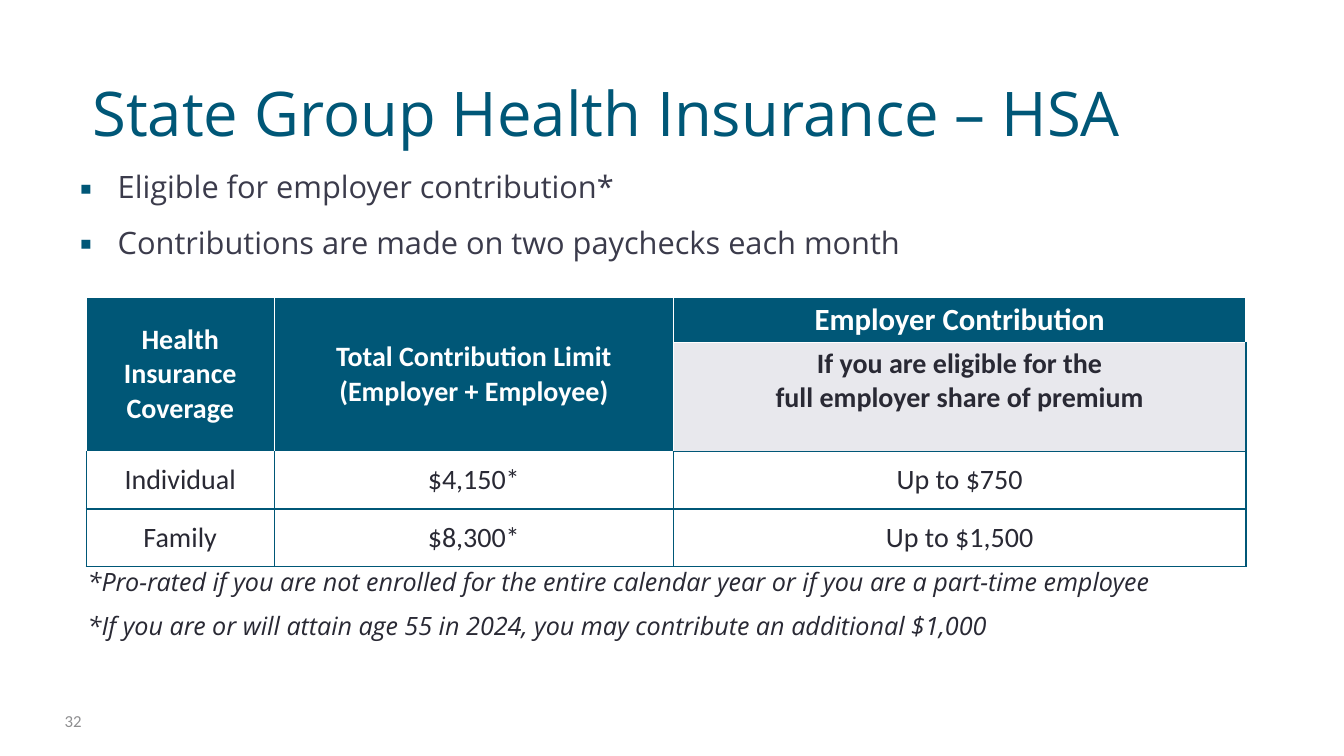
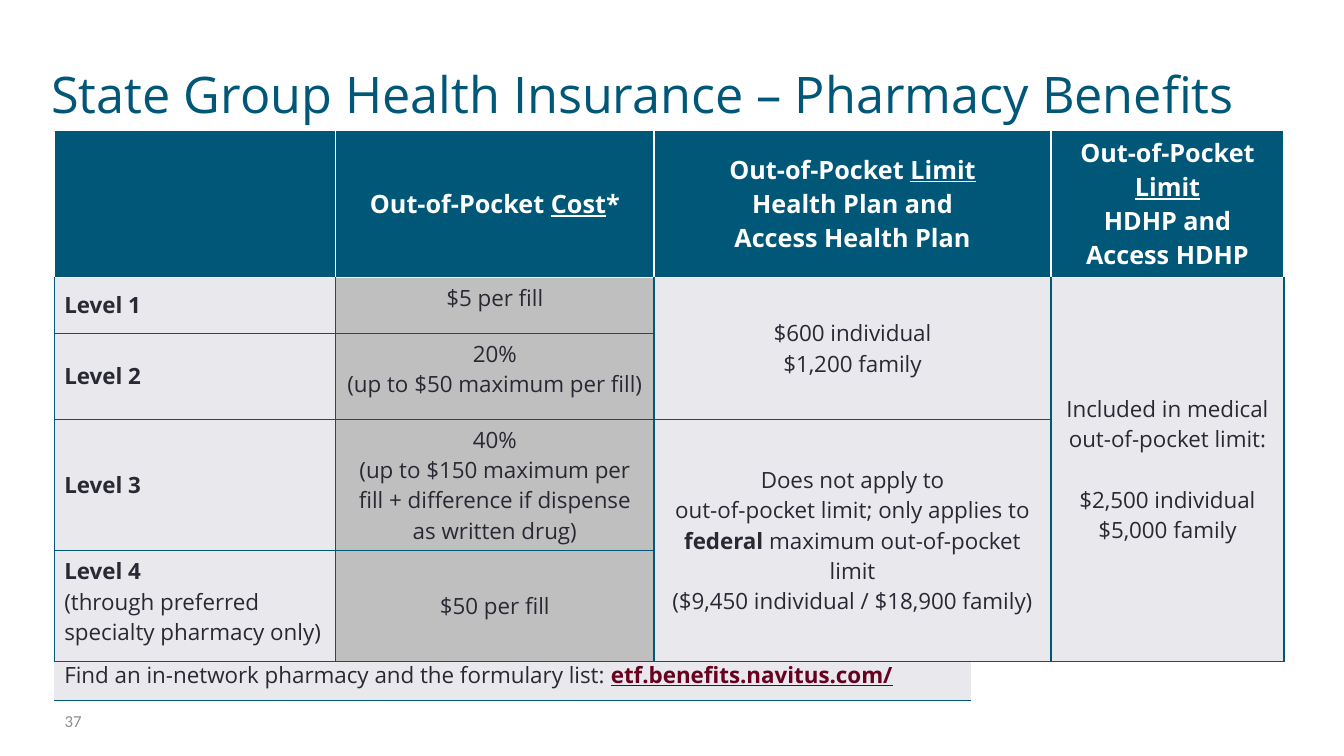
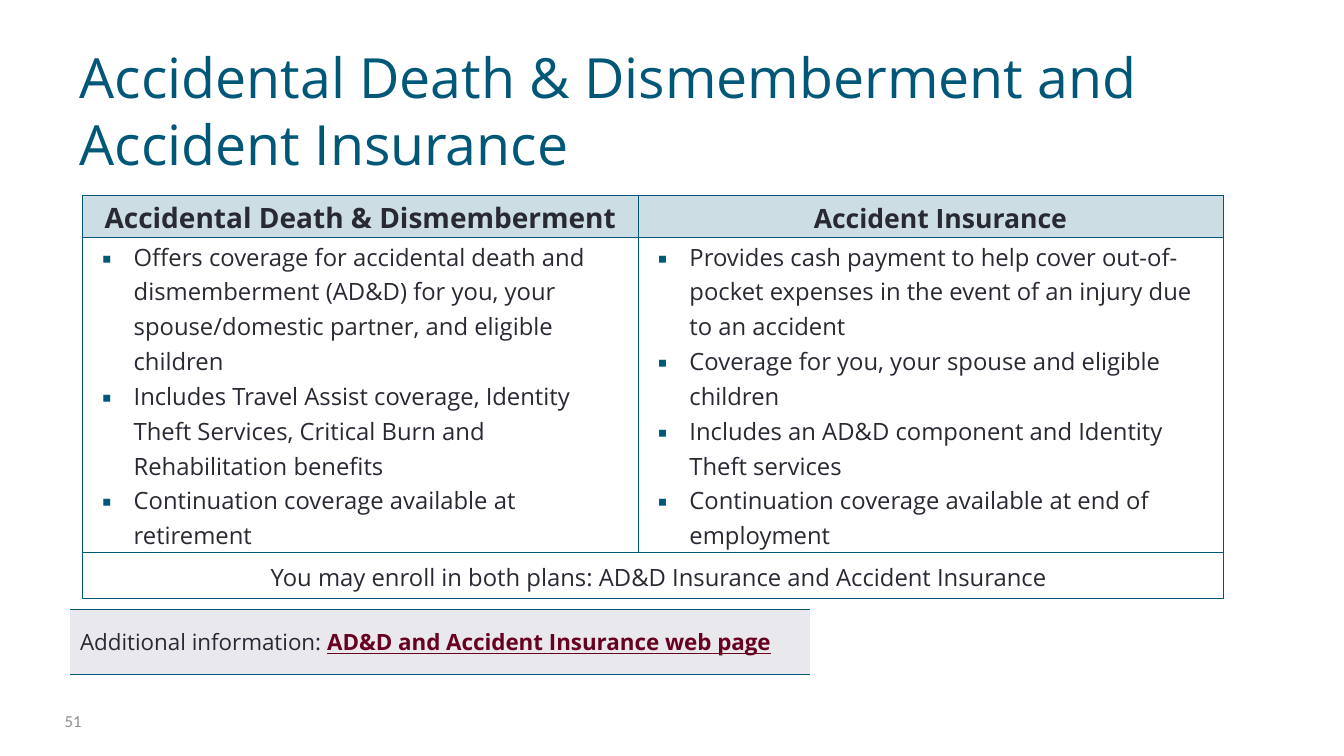
from dataclasses import dataclass, replace

from lxml.etree import SubElement
from pptx import Presentation
from pptx.dml.color import RGBColor as Rgb
from pptx.enum.text import MSO_ANCHOR as Anchor, PP_ALIGN as Align
from pptx.oxml.ns import qn
from pptx.util import Pt


# Theme
class Theme:
    teal, white, ink, slate = "005777", "FFFFFF", "292934", "3B3B4B"
    pale, gray, ice = "E8E8ED", "BFBFBF", "CCDDE4"
    link, number = "68001F", "8E8E90"
    sans, table_sans = "Open Sans", "Calibri"
    big, body, strong, note, text, small = 22, 17, 20, 18, 16, 12


@dataclass(frozen=True)
class Look:
    size: float
    color: str = Theme.ink
    face: str = Theme.sans
    fill: str = None
    bold: bool = False
    italic: bool = False
    align: Align = Align.LEFT
    anchor: Anchor = Anchor.MIDDLE
    left: float = 0        # left margin of the text
    hang: float = 0        # hanging bullet width, 0 for no bullet
    lines: float = 1.0
    after: float = 0


@dataclass(frozen=True)
class Cell:
    look: Look
    paras: tuple = ()
    rows: int = 1
    cols: int = 1


def cell(look, *paras, rows=1, cols=1):
    return Cell(look, paras, rows, cols)


TITLE = Look(44, Theme.teal, anchor=Anchor.BOTTOM)
NUMBER = Look(Theme.small, Theme.number, Theme.table_sans)
POINTS = Look(Theme.big, Theme.slate, anchor=Anchor.TOP, left=27, hang=27, after=13)
NOTES = Look(Theme.note, italic=True, anchor=Anchor.TOP, after=9.5)
BAND = Look(Theme.text, fill=Theme.pale)

# Looks of the HSA table
HSA = Look(Theme.strong, face=Theme.table_sans, align=Align.CENTER)
HSA_HEAD = replace(HSA, color=Theme.white, fill=Theme.teal, bold=True)
HSA_TOP = replace(HSA_HEAD, size=Theme.big, anchor=Anchor.TOP)
HSA_SUB = replace(HSA, fill=Theme.pale, bold=True, anchor=Anchor.TOP)

# Looks of the pharmacy table
RX_HEAD = Look(Theme.note, Theme.white, fill=Theme.teal, bold=True, align=Align.CENTER)
LEVEL = Look(Theme.text, fill=Theme.pale)
LIMIT = replace(LEVEL, align=Align.CENTER)
COST = replace(LIMIT, fill=Theme.gray)
COST_TOP = replace(COST, anchor=Anchor.TOP)

# Looks of the accident table
PLAN = Look(Theme.strong, fill=Theme.ice, bold=True, align=Align.CENTER, lines=1.07)
PLAN_RIGHT = replace(PLAN, size=19, left=13.5)
FEATURES = Look(Theme.body, anchor=Anchor.TOP, left=31.5, hang=22.5, lines=1.07)
BOTH = Look(Theme.body, align=Align.CENTER, left=8.5, lines=1.07)

# Content: a paragraph is a string, or a list of strings and (style, text) runs
SLIDES = [
    dict(
        number="32",
        title=("State Group Health Insurance – HSA", 44, (59, 20, 860, 90)),
        texts=[
            (POINTS, (50, 116.5, 860, 90), (
                "Eligible for employer contribution*",
                "Contributions are made on two paychecks each month")),
            (NOTES, (55.5, 401, 818, 63.5), (
                "*Pro-rated if you are not enrolled for the entire calendar year"
                " or if you are a part-time employee",
                "*If you are or will attain age 55 in 2024, you may contribute"
                " an additional $1,000")),
        ],
        table=dict(
            at=(61.5, 212.25), insets=(5, 3, 5, 3),
            cols=(134.5, 285, 409), rows=(32, 77, 41, 41),
            cells=[
                [cell(HSA_HEAD, "Health Insurance Coverage", rows=2),
                 cell(HSA_HEAD, "Total Contribution Limit", "(Employer + Employee)", rows=2),
                 cell(HSA_TOP, "Employer Contribution")],
                [None, None,
                 cell(HSA_SUB, "If you are eligible for the",
                      "full employer share of premium")],
                [cell(HSA, "Individual"), cell(HSA, "$4,150*"), cell(HSA, "Up to $750")],
                [cell(HSA, "Family"), cell(HSA, "$8,300*"), cell(HSA, "Up to $1,500")],
            ]),
    ),
    dict(
        number="37",
        title=("State Group Health Insurance – Pharmacy Benefits", 36, (29.5, 27.5, 904, 64)),
        band=((38.75, 463.5, 654.5, 37),
              ["Find an in-network pharmacy and the formulary list: ",
               ("link", "etf.benefits.navitus.com/")]),
        table=dict(
            at=(38.75, 93), insets=(7.2, 3.6, 7.2, 3.6),
            cols=(201, 227.5, 283.5, 166.5), rows=(105, 40, 61.5, 94, 79),
            cells=[
                [cell(RX_HEAD),
                 cell(RX_HEAD, ["Out-of-Pocket ", ("under", "Cost"), "*"]),
                 cell(RX_HEAD, ["Out-of-Pocket ", ("under", "Limit")],
                      "Health Plan and", "Access Health Plan"),
                 cell(RX_HEAD, ["Out-of-Pocket ", ("under", "Limit")],
                      "HDHP and", "Access HDHP")],
                [cell(LEVEL, [("bold", "Level 1")]),
                 cell(COST_TOP, "$5 per fill"),
                 cell(LIMIT, "$600 individual", "$1,200 family", rows=2),
                 cell(LIMIT, "Included in medical", "out-of-pocket limit:",
                      [("gap", "$2,500 individual")], "$5,000 family", rows=4)],
                [cell(LEVEL, [("bold", "Level 2")]),
                 cell(COST_TOP, "20%", "(up to $50 maximum per fill)"), None, None],
                [cell(LEVEL, [("bold", "Level 3")]),
                 cell(COST, "40%", "(up to $150 maximum per fill + difference if"
                      " dispense as written drug)"),
                 cell(LIMIT, "Does not apply to",
                      ["out-of-pocket limit; only applies to ", ("bold", "federal "),
                       "maximum out-of-pocket limit"],
                      "($9,450 individual / $18,900 family)", rows=2), None],
                [cell(replace(LEVEL, anchor=Anchor.TOP), [("bold", "Level 4")],
                      "(through preferred specialty pharmacy only)"),
                 cell(COST, "$50 per fill"), None, None],
            ]),
    ),
    dict(
        number="51",
        title=("Accidental Death & Dismemberment and Accident Insurance", 39.6,
               (50, 39.5, 860, 90)),
        band=((50, 435.5, 528.5, 46.5),
              ["Additional information: ", ("link", "AD&D and Accident Insurance web page")]),
        table=dict(
            at=(59, 139.5), insets=(5, 0.7, 5, 0),
            cols=(397, 418), rows=(30, 225, 33),
            cells=[
                [cell(PLAN, "Accidental Death & Dismemberment"),
                 cell(PLAN_RIGHT, "Accident Insurance")],
                [cell(FEATURES,
                      "Offers coverage for accidental death and dismemberment (AD&D)"
                      " for you, your spouse/domestic partner, and eligible children",
                      "Includes Travel Assist coverage, Identity Theft Services,"
                      " Critical Burn and Rehabilitation benefits",
                      "Continuation coverage available at retirement"),
                 cell(FEATURES,
                      "Provides cash payment to help cover out-of-pocket expenses"
                      " in the event of an injury due to an accident",
                      "Coverage for you, your spouse and eligible children",
                      "Includes an AD&D component and Identity Theft services",
                      "Continuation coverage available at end of employment")],
                [cell(BOTH, "You may enroll in both plans: AD&D Insurance and"
                      " Accident Insurance", cols=2), None],
            ]),
    ),
]


# Text
def add_bullet(para, look):
    props = para._p.get_or_add_pPr()
    props.set("marL", str(Pt(look.left)))
    props.set("indent", str(-Pt(look.hang)))
    if look.hang:
        color = SubElement(props, qn("a:buClr"))
        SubElement(color, qn("a:srgbClr"), val=Theme.teal)
        SubElement(props, qn("a:buFont"), typeface=Theme.sans)
        SubElement(props, qn("a:buChar"), char="▪")


def add_span(para, style, text):
    span = para.add_run()
    span.text = text
    if style in ("bold", "link"):
        span.font.bold = True
    if style in ("under", "link"):
        span.font.underline = True
    if style == "link":
        span.font.color.rgb = Rgb.from_string(Theme.link)
    if style == "gap":
        para.space_before = Pt(Theme.text * 1.36)


def write(frame, look, paras):
    for index, content in enumerate(paras):
        para = frame.add_paragraph() if index else frame.paragraphs[0]
        if look.left:
            add_bullet(para, look)
        para.alignment = look.align
        para.line_spacing = look.lines
        para.space_before = Pt(0)
        para.space_after = Pt(look.after)
        font = para.font
        font.name, font.size = look.face, Pt(look.size)
        font.bold, font.italic = look.bold, look.italic
        font.color.rgb = Rgb.from_string(look.color)
        for item in [content] if isinstance(content, str) else content:
            add_span(para, *(("", item) if isinstance(item, str) else item))


def add_text(page, look, area, paras):
    frame = page.shapes.add_textbox(*map(Pt, area)).text_frame
    frame.word_wrap = True
    frame.vertical_anchor = look.anchor
    write(frame, look, paras)


# Tables
def set_borders(target, colors):
    props = target._tc.get_or_add_tcPr()
    for side, color in zip("LRTB", colors):
        line = SubElement(props, qn(f"a:ln{side}"), w=str(Pt(1)))
        if color:
            fill = SubElement(line, qn("a:solidFill"))
            SubElement(fill, qn("a:srgbClr"), val=color)
        else:
            SubElement(line, qn("a:noFill"))


def paint(target, look, insets):
    if look.fill:
        target.fill.solid()
        target.fill.fore_color.rgb = Rgb.from_string(look.fill)
    else:
        target.fill.background()
    target.vertical_anchor = look.anchor
    (target.margin_left, target.margin_top,
     target.margin_right, target.margin_bottom) = map(Pt, insets)


def add_grid(page, at, cols, rows):
    table = page.shapes.add_table(
        len(rows), len(cols), *map(Pt, (*at, sum(cols), sum(rows)))).table
    table.first_row = table.horz_banding = False
    for column, width in zip(table.columns, cols):
        column.width = Pt(width)
    for row, height in zip(table.rows, rows):
        row.height = Pt(height)
    return table


def add_data_table(page, at, insets, cols, rows, cells):
    table = add_grid(page, at, cols, rows)
    # Every grid place gets the look of the cell that covers it
    looks = {(r + down, c + across): item.look
             for r, line in enumerate(cells) for c, item in enumerate(line) if item
             for down in range(item.rows) for across in range(item.cols)}

    def edge(*places):
        dark = any(place in looks and looks[place].fill == Theme.teal for place in places)
        return Theme.white if dark else Theme.teal

    for (r, c), look in looks.items():
        target = table.cell(r, c)
        here = (r, c)
        set_borders(target, (edge(here, (r, c - 1)), edge(here, (r, c + 1)),
                             edge(here, (r - 1, c)), edge(here)))
        paint(target, look, insets)
    for r, line in enumerate(cells):
        for c, item in enumerate(line):
            if item:
                target = table.cell(r, c)
                if item.rows * item.cols > 1:
                    target.merge(table.cell(r + item.rows - 1, c + item.cols - 1))
                write(target.text_frame, item.look, item.paras)


def add_link_band(page, area, content):
    left, top, width, height = area
    target = add_grid(page, (left, top), (width,), (height,)).cell(0, 0)
    set_borders(target, (None, None, Theme.teal, Theme.teal))
    paint(target, BAND, (7.2, 3.6, 7.2, 3.6))
    write(target.text_frame, BAND, [content])


# Slides
def main():
    deck = Presentation()
    deck.slide_width, deck.slide_height = Pt(960), Pt(540)
    for content in SLIDES:
        page = deck.slides.add_slide(deck.slide_layouts[6])
        title, size, area = content["title"]
        add_text(page, replace(TITLE, size=size), area, [title])
        add_text(page, NUMBER, (39, 500.5, 40, 29), [content["number"]])
        for text in content.get("texts", ()):
            add_text(page, *text)
        if "band" in content:
            add_link_band(page, *content["band"])
        add_data_table(page, **content["table"])
    deck.save("out.pptx")


if __name__ == "__main__":
    main()
